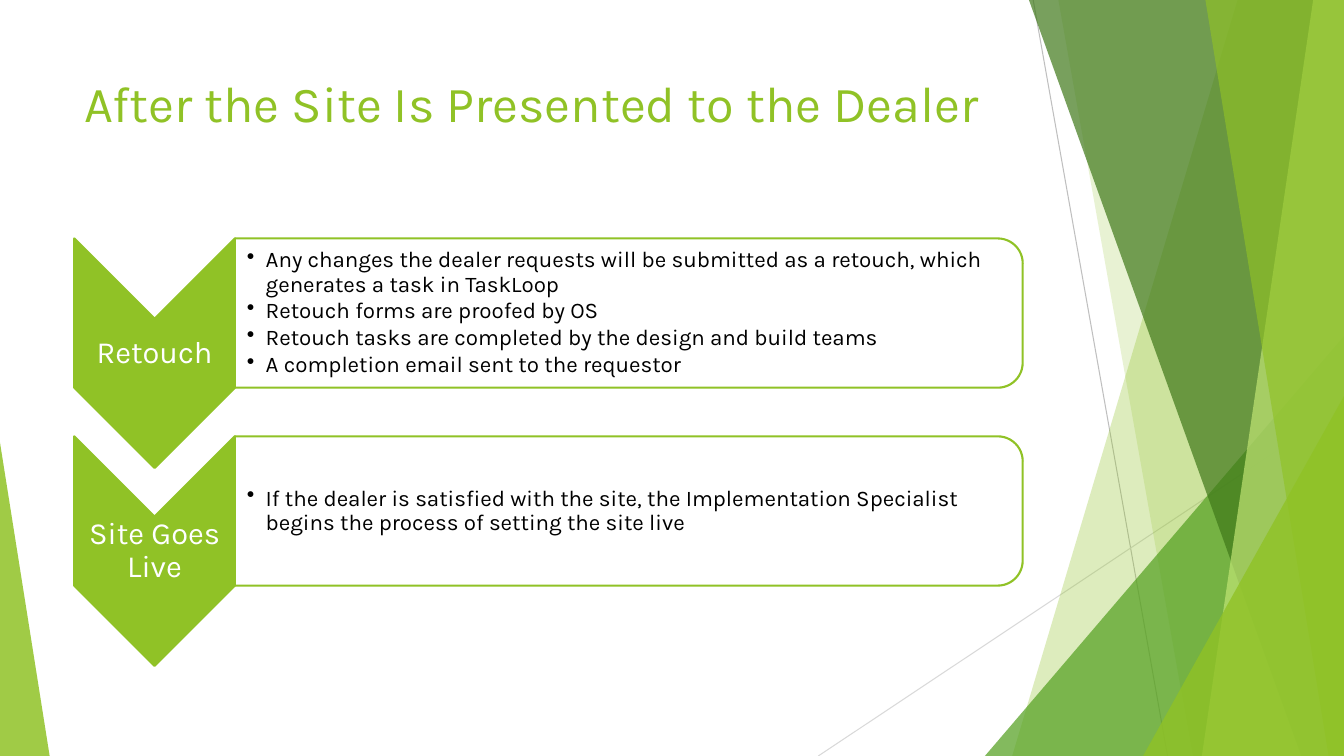
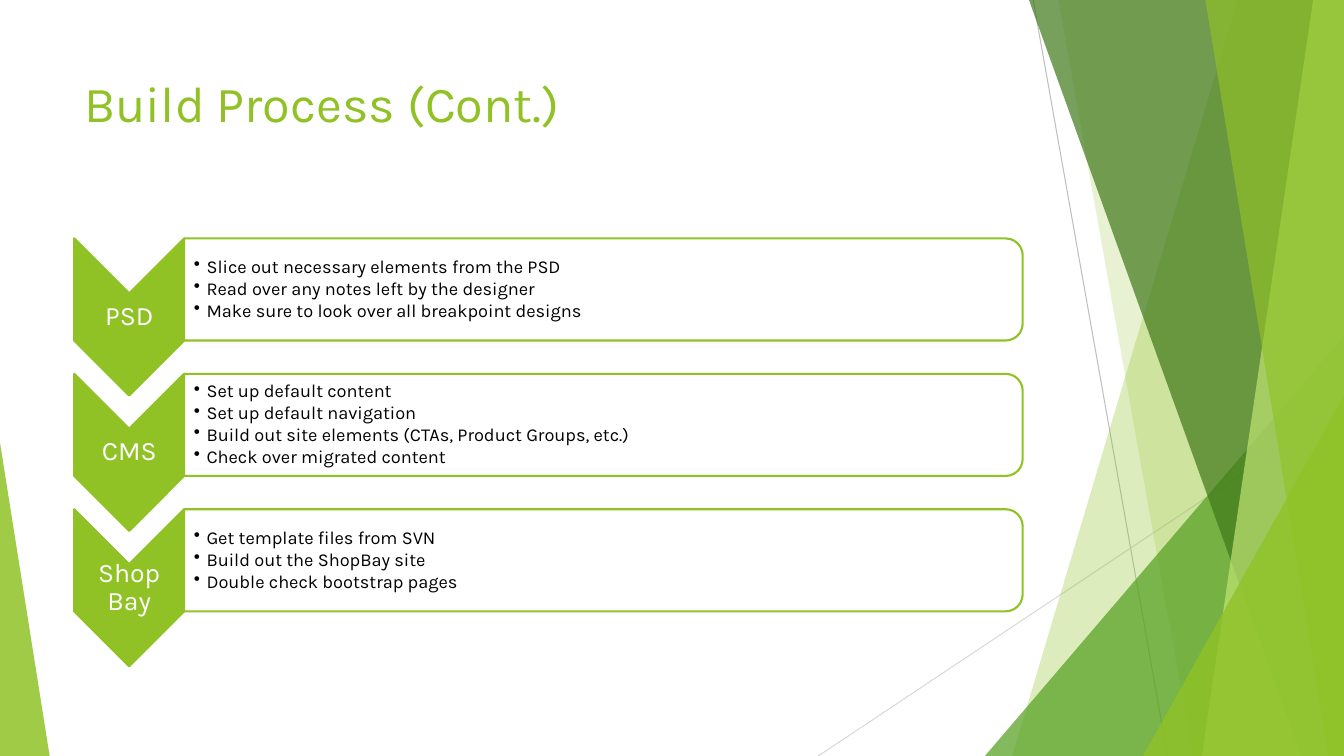
from lxml import etree
from pptx import Presentation
from pptx import util as u
from pptx.dml.color import RGBColor
from pptx.enum import shapes, text
from pptx.oxml.ns import qn

Pt = u.Pt

# Content: title, steps with their bullets, and the sizes that vary
SLIDES = [
    {
        "title": "After the Site Is Presented to the Dealer",
        "chevron_length": 164, "label_size": 22, "bullet_size": 16,
        "bullet_indent": 13.5, "bullet_inset": 8.5,
        "steps": [
            ("Retouch", [
                "Any changes the dealer requests will be submitted as a retouch, "
                "which generates a task in TaskLoop",
                "Retouch forms are proofed by OS",
                "Retouch tasks are completed by the design and build teams",
                "A completion email sent to the requestor",
            ]),
            ("Site Goes Live", [
                "If the dealer is satisfied with the site, the Implementation "
                "Specialist begins the process of setting the site live",
            ]),
        ],
    },
    {
        "title": "Build Process (Cont.)",
        "chevron_length": 112.2, "label_size": 19, "bullet_size": 13,
        "bullet_indent": 9, "bullet_inset": 7,
        "steps": [
            ("PSD", [
                "Slice out necessary elements from the PSD",
                "Read over any notes left by the designer",
                "Make sure to look over all breakpoint designs",
            ]),
            ("CMS", [
                "Set up default content",
                "Set up default navigation",
                "Build out site elements (CTAs, Product Groups, etc.)",
                "Check over migrated content",
            ]),
            ("Shop Bay", [
                "Get template files from SVN",
                "Build out the ShopBay site",
                "Double check bootstrap pages",
            ]),
        ],
    },
]

# Shared style
FONT = "Karla"
COLORS = {
    "lime": "90C226", "green": "54A021", "forest": "3F7819", "pale": "C0E474",
    "white": "FFFFFF", "black": "000000", "gray": "BFBFBF", "light_gray": "D9D9D9",
}
WIDTH, HEIGHT = 960, 540
LEFT, RIGHT, STEPS_TOP = 53, 730.5, 170.3

# Background: lines are (x1, y1, x2, y2, color); bands run from a top x to a
# bottom x and on to the right edge; triangles are (left, top, width, apex)
LINES = [(738, 0, 834, HEIGHT, "gray"), (WIDTH, 290, 584.5, HEIGHT, "light_gray")]
FACETS = [
    ("band", (884, 723), "lime", 30),
    ("band", (756, 852), "lime", 20),
    ("triangle", (703.5, 240, 256.5, 1), "green", 72),
    ("band", (735, 929.5), "forest", 70),
    ("band", (938, 858.5), "pale", 70),
    ("band", (861, 949), "lime", 65),
    ("triangle", (816.5, 283, 143.5, 1), "lime", 80),
    ("triangle", (0, 316, 35.5, 0), "lime", 85),
]


def rgb(name):
    return RGBColor.from_string(COLORS[name])


def paint(shape, fill, opacity=100, line=None):
    shape.shadow.inherit = False
    shape.fill.solid()
    shape.fill.fore_color.rgb = rgb(fill)
    if opacity < 100:
        color = shape.element.spPr.find(qn("a:solidFill"))[0]
        etree.SubElement(color, qn("a:alpha"), val=str(opacity * 1000))
    if line:
        shape.line.color.rgb = rgb(line)
        shape.line.width = Pt(1.5)
    else:
        shape.line.fill.background()


def add_text(slide, box, paragraphs, size, color, insets, anchor):
    frame = slide.shapes.add_textbox(*map(Pt, box)).text_frame
    frame.word_wrap = True
    frame.vertical_anchor = anchor
    (frame.margin_left, frame.margin_top,
     frame.margin_right, frame.margin_bottom) = map(Pt, insets)
    frame.text = "\n".join(paragraphs)
    for paragraph in frame.paragraphs:
        font = paragraph.runs[0].font
        font.name, font.size, font.color.rgb = FONT, Pt(size), rgb(color)
    return frame.paragraphs


def add_turned(slide, kind, left, top, width, height):
    """Add a shape turned by 90 degrees that covers the given box."""
    x, y = left + (width - height) / 2, top + (height - width) / 2
    shape = slide.shapes.add_shape(kind, Pt(x), Pt(y), Pt(height), Pt(width))
    shape.rotation = 90
    return shape


def add_background(slide):
    for x1, y1, x2, y2, color in LINES:
        line = slide.shapes.add_connector(
            shapes.MSO_CONNECTOR.STRAIGHT, Pt(x1), Pt(y1), Pt(x2), Pt(y2))
        line.line.color.rgb = rgb(color)
        line.line.width = Pt(0.75)
        etree.SubElement(line.element.spPr, qn("a:effectLst"))
    for kind, place, color, opacity in FACETS:
        if kind == "band":
            top_x, bottom_x = place
            builder = slide.shapes.build_freeform(Pt(top_x), 0)
            corners = [(WIDTH, 0), (WIDTH, HEIGHT), (bottom_x, HEIGHT)]
            builder.add_line_segments([(Pt(x), Pt(y)) for x, y in corners])
            facet = builder.convert_to_shape()
        else:
            left, top, width, apex = place
            facet = slide.shapes.add_shape(
                shapes.MSO_SHAPE.ISOSCELES_TRIANGLE,
                Pt(left), Pt(top), Pt(width), Pt(HEIGHT - top))
            facet.adjustments[0] = apex
        paint(facet, color, opacity)


def add_step(slide, content, top, label, bullets):
    length = content["chevron_length"]
    width, body_height = length * 0.7, length * 0.65
    body_left = LEFT + width
    body_width = RIGHT - body_left

    # Chevron and its label, between the notch and the start of the tip
    chevron = add_turned(slide, shapes.MSO_SHAPE.CHEVRON, LEFT, top, width, length)
    paint(chevron, "lime", line="lime")
    [paragraph] = add_text(
        slide, (LEFT, top + width / 2, width, length - width), [label],
        content["label_size"], "white", [1] * 4, text.MSO_ANCHOR.MIDDLE)
    paragraph.alignment = text.PP_ALIGN.CENTER
    paragraph.line_spacing = 0.9

    # Rounded panel and its bullets, kept clear of the corners
    panel = add_turned(slide, shapes.MSO_SHAPE.ROUND_2_SAME_RECTANGLE,
                       body_left, top, body_width, body_height)
    paint(panel, "white", 90, "lime")
    clear = body_height * 0.05
    paragraphs = add_text(
        slide, (body_left, top + clear, body_width - clear, body_height - 2 * clear),
        bullets, content["bullet_size"], "black",
        (content["bullet_inset"], 1, 1, 1), text.MSO_ANCHOR.MIDDLE)
    indent = Pt(content["bullet_indent"])
    for paragraph in paragraphs:
        paragraph.line_spacing = 0.9
        paragraph.space_after = Pt(content["bullet_size"] * 0.12)
        properties = paragraph._p.get_or_add_pPr()
        properties.set("marL", str(indent))
        properties.set("indent", str(-indent))
        etree.SubElement(properties, qn("a:buChar"), char="•")


def main():
    presentation = Presentation()
    presentation.slide_width, presentation.slide_height = Pt(WIDTH), Pt(HEIGHT)
    for content in SLIDES:
        slide = presentation.slides.add_slide(presentation.slide_layouts[6])
        add_background(slide)
        add_text(slide, (LEFT, 48, 677, 104), [content["title"]], 36, "lime",
                 (7.2, 3.6, 7.2, 3.6), text.MSO_ANCHOR.TOP)
        pitch = content["chevron_length"] * 0.862
        for index, (label, bullets) in enumerate(content["steps"]):
            add_step(slide, content, STEPS_TOP + index * pitch, label, bullets)
    presentation.save("out.pptx")


if __name__ == "__main__":
    main()
